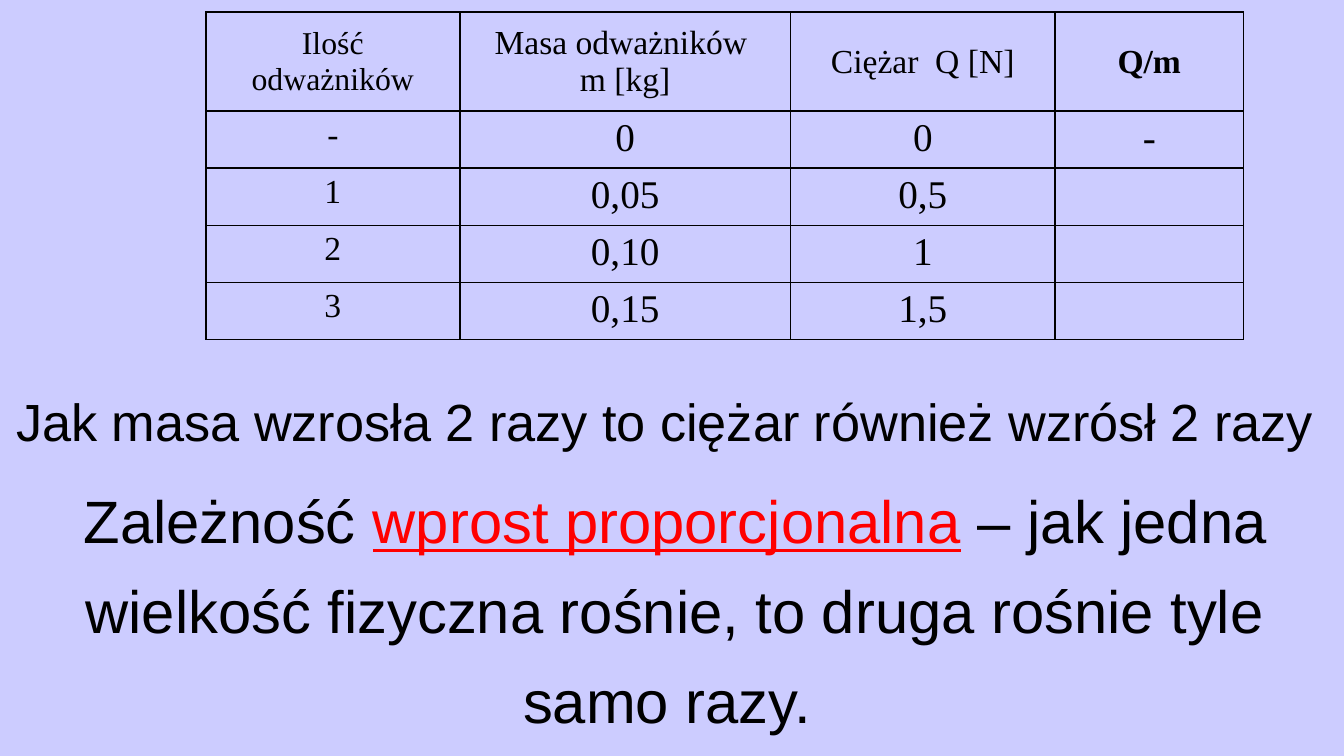
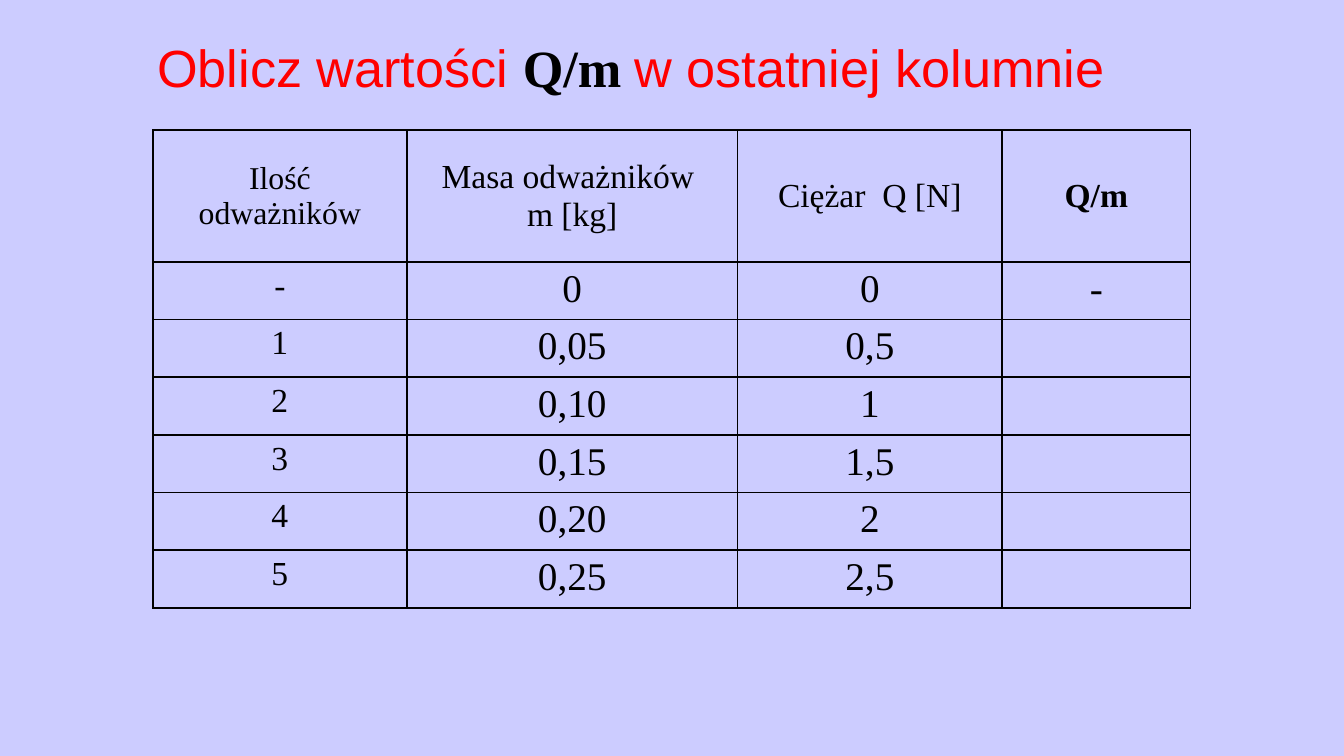
from dataclasses import dataclass

from lxml import etree
from pptx import Presentation
from pptx.dml.color import RGBColor
from pptx.enum.text import MSO_ANCHOR, MSO_AUTO_SIZE, PP_ALIGN
from pptx.oxml.ns import qn
from pptx.util import Cm, Pt

CENTER, LEFT = PP_ALIGN.CENTER, PP_ALIGN.LEFT
TOP, MIDDLE = MSO_ANCHOR.TOP, MSO_ANCHOR.MIDDLE
GROW = MSO_AUTO_SIZE.SHAPE_TO_FIT_TEXT
TITLE_ONLY, BLANK = 5, 6


@dataclass(frozen=True)
class Theme:
    """Colours, fonts and type sizes shared by the slides."""
    background: str = "CCCCFF"
    ink: str = "000000"
    accent: str = "FF0000"
    sans: str = "Arial"
    serif: str = "Times New Roman"
    title: int = 28
    rule: int = 32
    label: int = 18
    small_label: int = 17
    value: int = 21
    border: int = 1
    line_spacing: float = 1.25


@dataclass(frozen=True)
class Box:
    """A region of the slide, in centimetres."""
    left: float
    top: float
    width: float
    height: float

    def emu(self):
        """Return the region as slide lengths."""
        return [Cm(n) for n in (self.left, self.top, self.width, self.height)]


THEME = Theme()
COLUMN_WIDTHS = (4.8, 6.25, 5.0, 3.56)
VALUE_ROW_HEIGHT = 1.08
HEADERS = ("Ilość odważników", "Masa odważników \nm [kg]", "Ciężar  Q [N]", "Q/m")
MEASUREMENTS = (
    ("-", "0", "0", "-"),
    ("1", "0,05", "0,5", ""),
    ("2", "0,10", "1", ""),
    ("3", "0,15", "1,5", ""),
    ("4", "0,20", "2", ""),
    ("5", "0,25", "2,5", ""),
)


def style_run(run, size, font, color=THEME.ink, bold=False, underline=False):
    """Apply one type style to a run."""
    run.font.size = Pt(size)
    run.font.name = font
    run.font.color.rgb = RGBColor.from_string(color)
    run.font.bold = bold
    run.font.underline = underline


def write_pieces(paragraph, pieces, size):
    """Fill a paragraph with (text, style) pieces of one size."""
    for text, style in pieces:
        run = paragraph.add_run()
        run.text = text
        style_run(run, size, **{"font": THEME.sans, **style})


def outline_cell(cell):
    """Leave a cell unfilled and draw its four borders."""
    cell.fill.background()
    properties = cell._tc.get_or_add_tcPr()
    for position, side in enumerate(("a:lnL", "a:lnR", "a:lnT", "a:lnB")):
        border = etree.Element(qn(side), w=str(Pt(THEME.border)))
        fill = etree.SubElement(border, qn("a:solidFill"))
        etree.SubElement(fill, qn("a:srgbClr"), val=THEME.ink)
        properties.insert(position, border)


def write_cell(cell, text, size, anchor, bold):
    """Write one centred table cell."""
    cell.margin_left = cell.margin_right = Cm(0.25)
    cell.margin_top = cell.margin_bottom = Cm(0.1)
    cell.vertical_anchor = anchor
    paragraph = cell.text_frame.paragraphs[0]
    paragraph.text = text
    paragraph.alignment = CENTER
    for run in paragraph.runs:
        style_run(run, size, THEME.serif, bold=bold)
    outline_cell(cell)


def add_measurements(slide, left, top, header_height, measurements):
    """Add the table of masses and weights."""
    rows = (HEADERS, *measurements)
    height = header_height + VALUE_ROW_HEIGHT * len(measurements)
    box = Box(left, top, sum(COLUMN_WIDTHS), height)
    table = slide.shapes.add_table(len(rows), len(HEADERS), *box.emu()).table
    table.first_row = table.horz_banding = False
    for column, width in zip(table.columns, COLUMN_WIDTHS):
        column.width = Cm(width)
    for r, texts in enumerate(rows):
        is_header = r == 0
        table.rows[r].height = Cm(header_height if is_header else VALUE_ROW_HEIGHT)
        for c, text in enumerate(texts):
            if is_header:
                size = THEME.small_label if c == 0 else THEME.label
            else:
                size = THEME.label if c == 0 else THEME.value
            write_cell(table.cell(r, c), text, size, MIDDLE if is_header else TOP,
                       is_header and text == "Q/m")


def add_statement(slide, box, pieces, size):
    """Add a centred statement that wraps within its box."""
    frame = slide.shapes.add_textbox(*box.emu()).text_frame
    frame.word_wrap = True
    frame.auto_size = GROW
    paragraph = frame.paragraphs[0]
    paragraph.alignment = CENTER
    paragraph.line_spacing = THEME.line_spacing
    write_pieces(paragraph, pieces, size)


def place_title(slide, box, pieces):
    """Move the title placeholder into its box and write it."""
    title = slide.shapes.title
    title.left, title.top, title.width, title.height = box.emu()
    frame = title.text_frame
    frame.word_wrap = True
    frame.auto_size = GROW
    frame.vertical_anchor = MIDDLE
    paragraph = frame.paragraphs[0]
    paragraph.alignment = LEFT
    write_pieces(paragraph, pieces, THEME.title)


def build_proportionality(prs):
    """Build the slide that states direct proportionality."""
    slide = prs.slides.add_slide(prs.slide_layouts[BLANK])
    add_measurements(slide, 3.89, 0.23, 1.87, MEASUREMENTS[:4])
    add_statement(slide, Box(0, 6.93, 25.12, 1.75), [
        ("Jak masa wzrosła 2 razy to ciężar również wzrósł 2 razy", {}),
    ], THEME.title)
    add_statement(slide, Box(1.07, 8.69, 23.39, 5.2), [
        ("Zależność ", {}),
        ("wprost proporcjonalna", {"color": THEME.accent, "underline": True}),
        (" – jak jedna wielkość fizyczna rośnie, to druga rośnie tyle samo razy. ", {}),
    ], THEME.rule)


def build_exercise(prs):
    """Build the slide that asks for the quotients."""
    slide = prs.slides.add_slide(prs.slide_layouts[TITLE_ONLY])
    place_title(slide, Box(2.72, 0.53, 19.4, 1.45), [
        ("Oblicz wartości ", {"color": THEME.accent}),
        ("Q/m ", {"font": THEME.serif, "bold": True}),
        ("w ostatniej kolumnie", {"color": THEME.accent}),
    ])
    add_measurements(slide, 2.89, 2.46, 2.49, MEASUREMENTS)


def main():
    """Build and save the presentation."""
    prs = Presentation()
    prs.slide_width, prs.slide_height = Cm(25.4), Cm(14.29)
    fill = prs.slide_master.background.fill
    fill.solid()
    fill.fore_color.rgb = RGBColor.from_string(THEME.background)
    build_proportionality(prs)
    build_exercise(prs)
    prs.save("out.pptx")


if __name__ == "__main__":
    main()
